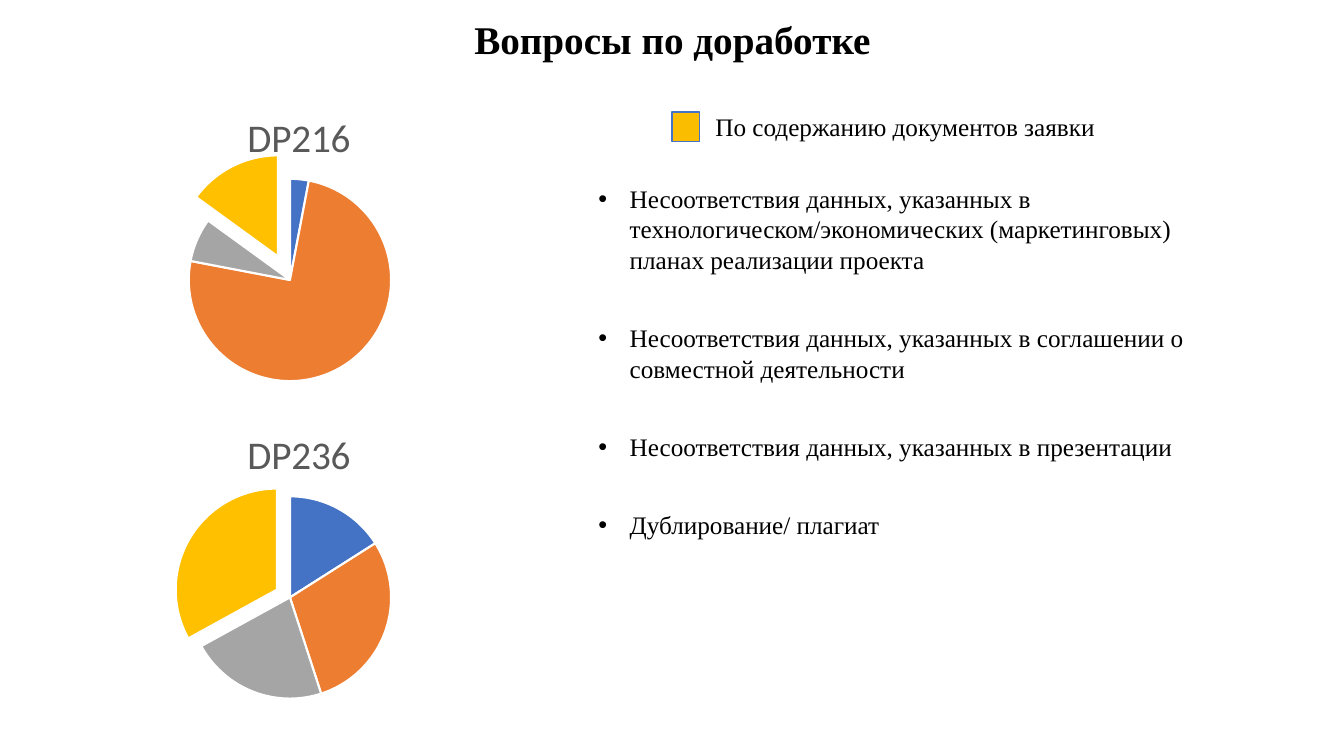
from dataclasses import dataclass

from lxml import etree
from pptx import Presentation
from pptx.chart.data import CategoryChartData
from pptx.dml.color import RGBColor
from pptx.enum.chart import XL_CHART_TYPE
from pptx.enum.shapes import MSO_SHAPE
from pptx.enum.text import PP_ALIGN
from pptx.oxml import parse_xml
from pptx.oxml.ns import nsdecls, qn
from pptx.util import Cm, Pt

PIE = XL_CHART_TYPE.PIE
RECT = MSO_SHAPE.RECTANGLE
LEFT, CENTER = PP_ALIGN.LEFT, PP_ALIGN.CENTER


@dataclass(frozen=True)
class Theme:
    font: str = "Times New Roman"
    chart_font: str = "Calibri"
    ink: str = "000000"
    gray: str = "595959"
    white: str = "FFFFFF"
    gold: str = "FBBD00"
    blue: str = "4472C4"
    slices: tuple = ("4472C4", "ED7D31", "A5A5A5", "FFC000")
    head: int = 28
    body: int = 18
    small: int = 10


def color(code):
    return RGBColor.from_string(code)


def layout(x, y, w=None, h=None):
    """Manual chart layout, in fractions of the chart frame."""
    rows = [("xMode", "edge"), ("yMode", "edge"), ("x", x), ("y", y)]
    if w:
        rows = [("layoutTarget", "inner")] + rows + [("w", w), ("h", h)]
    body = "".join(f'<c:{tag} val="{val}"/>' for tag, val in rows)
    return parse_xml(f'<c:layout {nsdecls("c")}><c:manualLayout>{body}'
                     "</c:manualLayout></c:layout>")


def place(parent, index, item):
    """Put a layout into a chart part in place of any it has."""
    for old in parent.findall(qn("c:layout")):
        parent.remove(old)
    parent.insert(index, item)


class Page:
    def __init__(self, slide, theme):
        self.shapes = slide.shapes
        self.theme = theme

    def style(self, font, size, code, name, bold=False):
        font.name, font.size, font.bold = name, Pt(size), bold
        font.color.rgb = color(code)

    def text(self, box, words, size=None, bold=False, align=LEFT, bullet=False):
        frame = self.shapes.add_textbox(*map(Cm, box)).text_frame
        frame.word_wrap = True
        para = frame.paragraphs[0]
        para.alignment = align
        if bullet:
            props = para._p.get_or_add_pPr()
            props.set("marL", str(Cm(0.79)))
            props.set("indent", str(Cm(-0.79)))
            etree.SubElement(props, qn("a:buFont")).set("typeface", "Arial")
            etree.SubElement(props, qn("a:buChar")).set("char", "•")
        run = para.add_run()
        run.text = words
        look = self.theme
        self.style(run.font, size or look.body, look.ink, look.font, bold)

    def swatch(self, box):
        shape = self.shapes.add_shape(RECT, *map(Cm, box))
        shape.shadow.inherit = False
        shape.fill.solid()
        shape.fill.fore_color.rgb = color(self.theme.gold)
        shape.line.color.rgb = color(self.theme.blue)
        shape.line.width = Pt(1)

    def pie(self, box, title, values, burst):
        """Pie chart whose last slice is pulled out by burst percent."""
        look = self.theme
        data = CategoryChartData()
        data.categories = ["1", "2", "3", "4"]
        data.add_series(title, values)
        chart = self.shapes.add_chart(PIE, *map(Cm, box), data).chart
        self.style(chart.font, look.small, look.ink, look.chart_font)
        chart.has_legend = False
        chart.has_title = True
        run = chart.chart_title.text_frame.paragraphs[0].add_run()
        run.text = title
        self.style(run.font, look.head, look.gray, look.chart_font)
        place(chart.chart_title._element, 1, layout(0.36, 0.07))

        plot = chart.plots[0]
        plot.vary_by_categories = True
        place(plot._element.getparent(), 0, layout(0.22, 0.31, 0.55, 0.65))
        points = plot.series[0].points
        for i, code in enumerate(look.slices):
            form = points[i].format
            form.fill.solid()
            form.fill.fore_color.rgb = color(code)
            form.line.color.rgb = color(look.white)
            form.line.width = Pt(1.5)
        last = plot.series[0]._element.findall(qn("c:dPt"))[-1]
        pull = parse_xml(f'<c:explosion {nsdecls("c")} val="{burst}"/>')
        last.find(qn("c:spPr")).addprevious(pull)


PIES = [
    ("DP216", (3, 75, 7, 15), 26),
    ("DP236", (16, 29, 22, 33), 15),
]
ISSUES = [
    ("Несоответствия данных, указанных в технологическом/экономических "
     "(маркетинговых) планах реализации проекта", 3),
    ("Несоответствия данных, указанных в соглашении о совместной "
     "деятельности", 2),
    ("Несоответствия данных, указанных в презентации", 1),
    ("Дублирование/ плагиат", 1),
]


def main():
    deck = Presentation()
    deck.slide_width, deck.slide_height = Cm(33.87), Cm(19.05)
    theme = Theme()
    page = Page(deck.slides.add_slide(deck.slide_layouts[6]), theme)

    page.text((8.79, 0.25, 16.31, 1.45), "Вопросы по доработке",
              theme.head, True, CENTER)
    for i, (title, values, burst) in enumerate(PIES):
        page.pie((2.72, 2.06 + 8 * i, 9.27, 7.87), title, values, burst)

    page.swatch((16.94, 2.82, 0.69, 0.74))
    page.text((17.78, 2.67, 11.02, 1.02), "По содержанию документов заявки")
    top = 4.5
    for words, lines in ISSUES:
        high = 0.25 + 0.77 * lines
        page.text((14.83, top, 16.94, high), words, bullet=True)
        top += high + 0.95

    deck.save("out.pptx")


if __name__ == "__main__":
    main()
